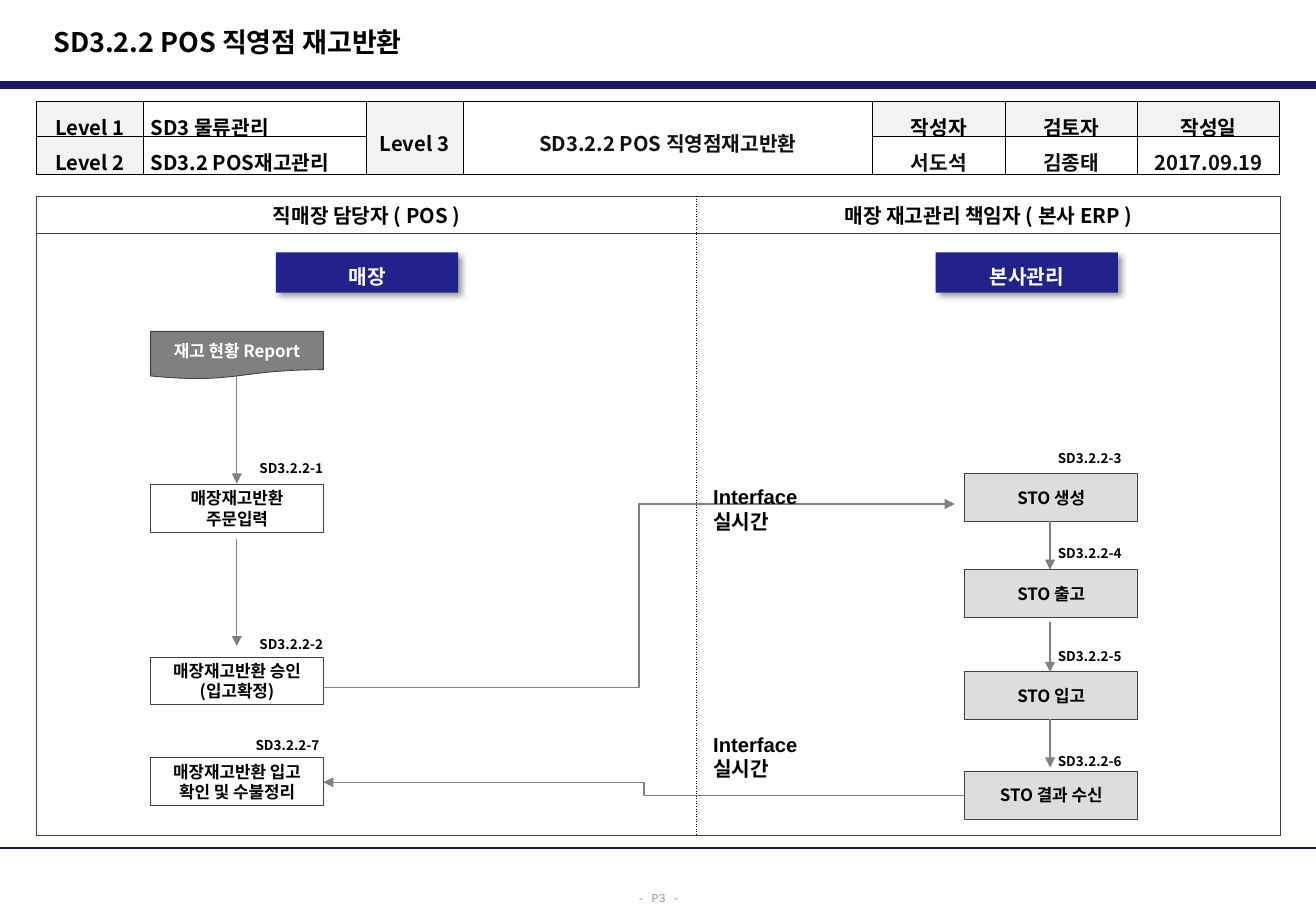
from lxml import etree
from pptx import Presentation
from pptx.dml.color import RGBColor
from pptx.enum.dml import MSO_LINE
from pptx.enum.shapes import MSO_CONNECTOR, MSO_SHAPE
from pptx.enum.text import MSO_ANCHOR, PP_ALIGN
from pptx.oxml.ns import qn
from pptx.util import Cm, Pt

LEFT, CENTER, RIGHT = PP_ALIGN.LEFT, PP_ALIGN.CENTER, PP_ALIGN.RIGHT
TOP, MIDDLE = MSO_ANCHOR.TOP, MSO_ANCHOR.MIDDLE
STRAIGHT, ELBOW = MSO_CONNECTOR.STRAIGHT, MSO_CONNECTOR.ELBOW
RECT, DOCUMENT = MSO_SHAPE.RECTANGLE, MSO_SHAPE.FLOWCHART_DOCUMENT
SOLID = MSO_LINE.SOLID
KOREAN = "Noto Sans CJK KR"
NAVY, BANNER, GRAY, FRAME = "191966", "22228B", "808080", "404040"
PALE, HEAD, BLACK, WHITE = "DDDDDD", "F2F2F2", "000000", "FFFFFF"
OUTER = (FRAME, 0.5, "solid")
DOTTED = (BLACK, 1, "sysDot")
GRID = (BLACK, 0.5, "solid")


def rgb(value):
    return RGBColor.from_string(value)


def sub(parent, tag, **attrs):
    return etree.SubElement(parent, qn(tag), {k: str(v) for k, v in attrs.items()})


class Deck:
    def __init__(self, width, height):
        self.prs = Presentation()
        self.prs.slide_width, self.prs.slide_height = Cm(width), Cm(height)
        self.slide = self.prs.slides.add_slide(self.prs.slide_layouts[5])
        self.shapes = self.slide.shapes

    def fill_text(self, tf, text, size=12, color=BLACK, bold=True, font=KOREAN,
                  align=CENTER, anchor=MIDDLE, spacing=None, margins=None, wrap=True):
        frame = {"word_wrap": wrap, "vertical_anchor": anchor}
        if margins:
            x, y = (Cm(m) for m in margins)
            frame.update(margin_left=x, margin_right=x, margin_top=y, margin_bottom=y)
        for name, value in frame.items():
            setattr(tf, name, value)
        for i, line in enumerate(text.split("\n")):
            p = tf.add_paragraph() if i else tf.paragraphs[0]
            p.alignment, p.line_spacing = align, spacing
            r = p.add_run()
            r.text = line
            for name, value in {"name": font, "size": Pt(size), "bold": bold}.items():
                setattr(r.font, name, value)
            r.font.color.rgb = rgb(color)
            sub(r._r.get_or_add_rPr(), "a:ea", typeface=KOREAN)

    def title(self, text, x, y, w, h):
        s = self.shapes.title
        s.left, s.top, s.width, s.height = Cm(x), Cm(y), Cm(w), Cm(h)
        self.fill_text(s.text_frame, text, 16, align=LEFT)

    def text(self, text, x, y, w, h, **style):
        s = self.shapes.add_textbox(Cm(x), Cm(y), Cm(w), Cm(h))
        self.fill_text(s.text_frame, text, **{"anchor": TOP, **style})

    def box(self, text, x, y, w, h, fill=None, line=None, kind=RECT, **style):
        s = self.shapes.add_shape(kind, Cm(x), Cm(y), Cm(w), Cm(h))
        s.shadow.inherit = False
        if fill:
            s.fill.solid()
            s.fill.fore_color.rgb = rgb(fill)
        else:
            s.fill.background()
        if line:
            s.line.color.rgb, s.line.width = rgb(line), Pt(0.5)
        else:
            s.line.fill.background()
        self.fill_text(s.text_frame, text, **style)
        return s

    def banner(self, text, x, y):
        s = self.box(text, x, y, 3.81, 0.84, BANNER, color=WHITE, spacing=1.3)
        effects = s._element.spPr.find(qn("a:effectLst"))
        shadow = sub(effects, "a:outerShdw", blurRad=Pt(4), dist=Pt(3), dir=2700000,
                     algn="tl", rotWithShape=0)
        sub(sub(shadow, "a:srgbClr", val=BLACK), "a:alpha", val=40000)

    def line(self, x1, y1, x2, y2, color=GRAY, width=0.75, kind=STRAIGHT, arrow=True):
        s = self.shapes.add_connector(kind, Cm(x1), Cm(y1), Cm(x2), Cm(y2))
        for name, value in {"width": Pt(width), "dash_style": SOLID}.items():
            setattr(s.line, name, value)
        s.line.color.rgb = rgb(color)
        spPr = s._element.spPr
        if arrow:
            sub(spPr.find(qn("a:ln")), "a:tailEnd", type="triangle")
        sub(spPr, "a:effectLst")

    def table(self, x, y, cols, rows):
        s = self.shapes.add_table(len(rows), len(cols), Cm(x), Cm(y),
                                  Cm(sum(cols)), Cm(sum(rows)))
        t = s.table
        t.first_row = t.horz_banding = False
        for col, w in zip(t.columns, cols):
            col.width = Cm(w)
        for row, h in zip(t.rows, rows):
            row.height = Cm(h)
        return t

    def cell(self, cell, text, borders, fill=None, **style):
        if fill:
            cell.fill.solid()
            cell.fill.fore_color.rgb = rgb(fill)
        else:
            cell.fill.background()
        tcPr = cell._tc.get_or_add_tcPr()
        for i, (side, (color, width, dash)) in enumerate(zip("LRTB", borders)):
            ln = sub(tcPr, f"a:ln{side}", w=Pt(width))
            sub(sub(ln, "a:solidFill"), "a:srgbClr", val=color)
            sub(ln, "a:prstDash", val=dash)
            tcPr.insert(i, ln)
        if text:
            x, y = (Cm(m) for m in style.pop("margins"))
            cell.vertical_anchor = style.pop("anchor", MIDDLE)
            cell.margin_left = cell.margin_right = x
            cell.margin_top = cell.margin_bottom = y
            self.fill_text(cell.text_frame, text, anchor=None, wrap=None, **style)


def lanes(d):
    t = d.table(0.76, 4.11, [13.8, 12.2], [0.76, 12.6])
    heads = ["직매장 담당자 ( POS )", "매장 재고관리 책임자 ( 본사 ERP )"]
    sides = [(OUTER, DOTTED), (DOTTED, OUTER)]
    for c, (head, (left, right)) in enumerate(zip(heads, sides)):
        for r, text in enumerate([head, ""]):
            d.cell(t.cell(r, c), text, (left, right, OUTER, OUTER),
                   anchor=TOP, margins=(0.25, 0.07))


def document_info(d):
    t = d.table(0.76, 2.13, [2.24, 4.65, 2.03, 8.56, 2.77, 2.77, 2.97], [0.71, 0.79])
    rows = [
        ["Level 1", "SD3 물류관리", "Level 3", "SD3.2.2 POS 직영점재고반환", "작성자", "검토자", "작성일"],
        ["Level 2", "SD3.2 POS재고관리", "", "", "서도석", "김종태", "2017.09.19"],
    ]
    for c in (2, 3):
        t.cell(0, c).merge(t.cell(1, c))
    for r, row in enumerate(rows):
        for c, text in enumerate(row):
            label = c in (0, 2) or (r == 0 and c > 3)
            d.cell(t.cell(r, c), text, [GRID] * 4, HEAD if label else None,
                   color=BLACK if label or c == 1 else "111111",
                   align=LEFT if c == 1 else CENTER, spacing=1.3, margins=(0.15, 0.03))


def process(d):
    for text, x in [("매장", 5.77), ("본사관리", 19.56)]:
        d.banner(text, x, 5.28)
    left, right = 3.15, 20.17
    steps = [
        ("재고 현황 Report", left, 6.93, GRAY, DOCUMENT, WHITE),
        ("매장재고반환\n주문입력", left, 10.13, None, RECT, BLACK),
        ("매장재고반환 승인\n(입고확정)", left, 13.74, None, RECT, BLACK),
        ("매장재고반환 입고\n확인 및 수불정리", left, 15.85, None, RECT, BLACK),
        ("STO 생성", right, 9.91, PALE, RECT, BLACK),
        ("STO 출고", right, 11.91, PALE, RECT, BLACK),
        ("STO 입고", right, 14.05, PALE, RECT, BLACK),
        ("STO 결과 수신", right, 16.13, PALE, RECT, BLACK),
    ]
    for text, x, y, fill, kind, color in steps:
        d.box(text, x, y, 3.61, 1, fill, FRAME, kind, size=10, color=color,
              margins=(0.1, 0.13))
    codes = [(5.26, 9.53), (5.26, 13.21), (21.95, 9.32), (21.95, 11.3),
             (21.95, 13.46), (21.95, 15.65), (5.18, 15.32)]
    for n, (x, y) in enumerate(codes, 1):
        d.text(f"SD3.2.2-{n}", x, y, 1.5, 0.53, size=8, align=RIGHT, margins=(0, 0.1))
    for x, y1, y2 in [(4.95, 7.85, 10.11), (4.95, 11.28, 13.51), (21.95, 10.9, 11.91),
                      (21.95, 13, 14.05), (21.95, 15.04, 16.05)]:
        d.line(x, y1, x, y2)
    d.line(6.76, 14.38, 19.96, 10.54, kind=ELBOW)
    d.line(20.17, 16.64, 6.76, 16.36, kind=ELBOW)
    for y in (10.01, 15.19):
        d.text("Interface\n실시간", 14.66, y, 2.39, 1.27, font="Arial", align=LEFT)


def main():
    d = Deck(27.51, 19.05)
    d.title("SD3.2.2 POS 직영점 재고반환", 0.86, 0.41, 18.06, 0.94)
    for y, width in [(1.78, 4.5), (17.73, 1.5)]:
        d.line(0, y, 27.51, y, NAVY, width, arrow=False)
    d.text("- P3 -", 13.06, 18.42, 1.42, 0.64, size=7, color="969696", bold=False,
           font="Courier New", spacing=1.3, wrap=False)
    lanes(d)
    document_info(d)
    process(d)
    d.prs.save("out.pptx")


if __name__ == "__main__":
    main()
